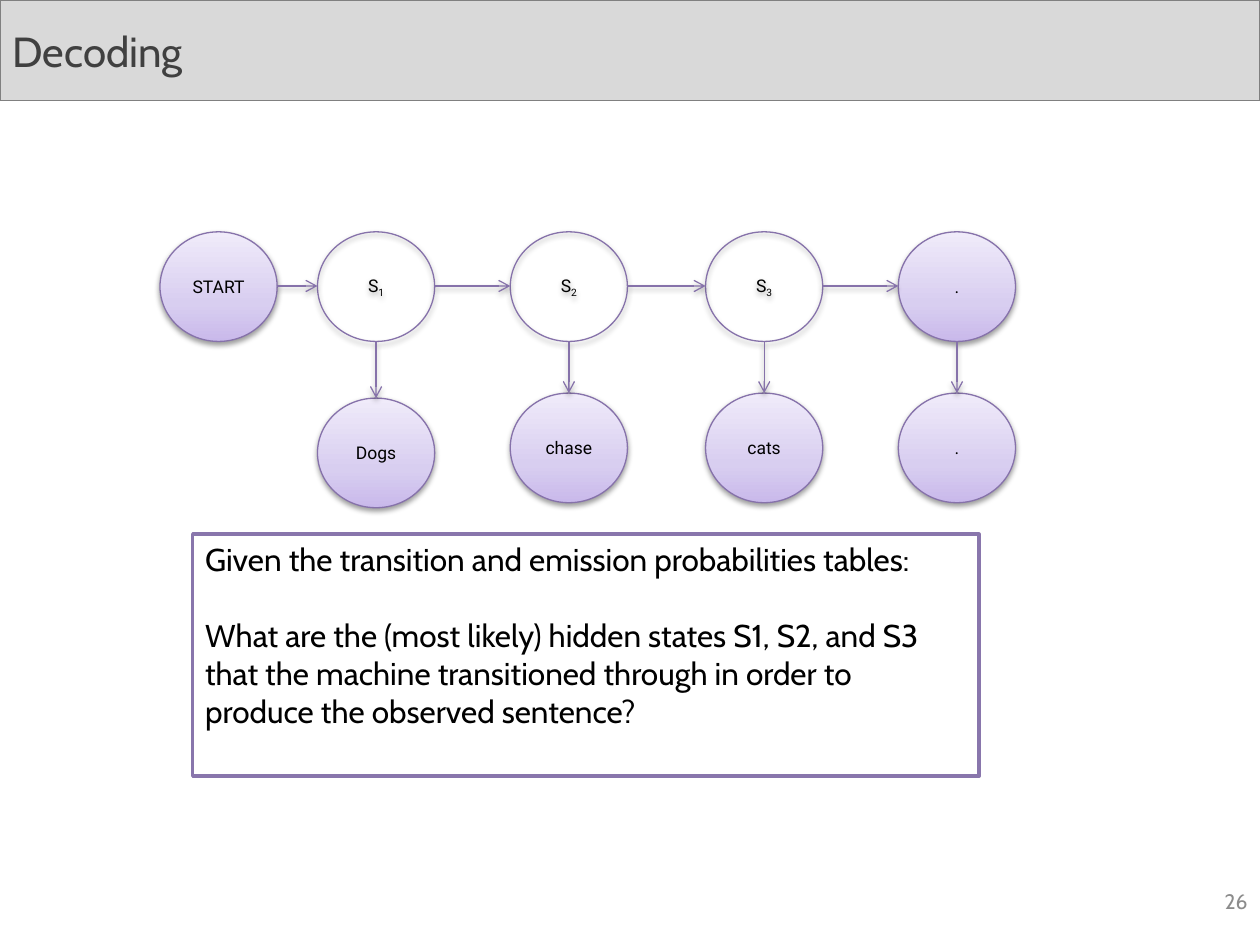
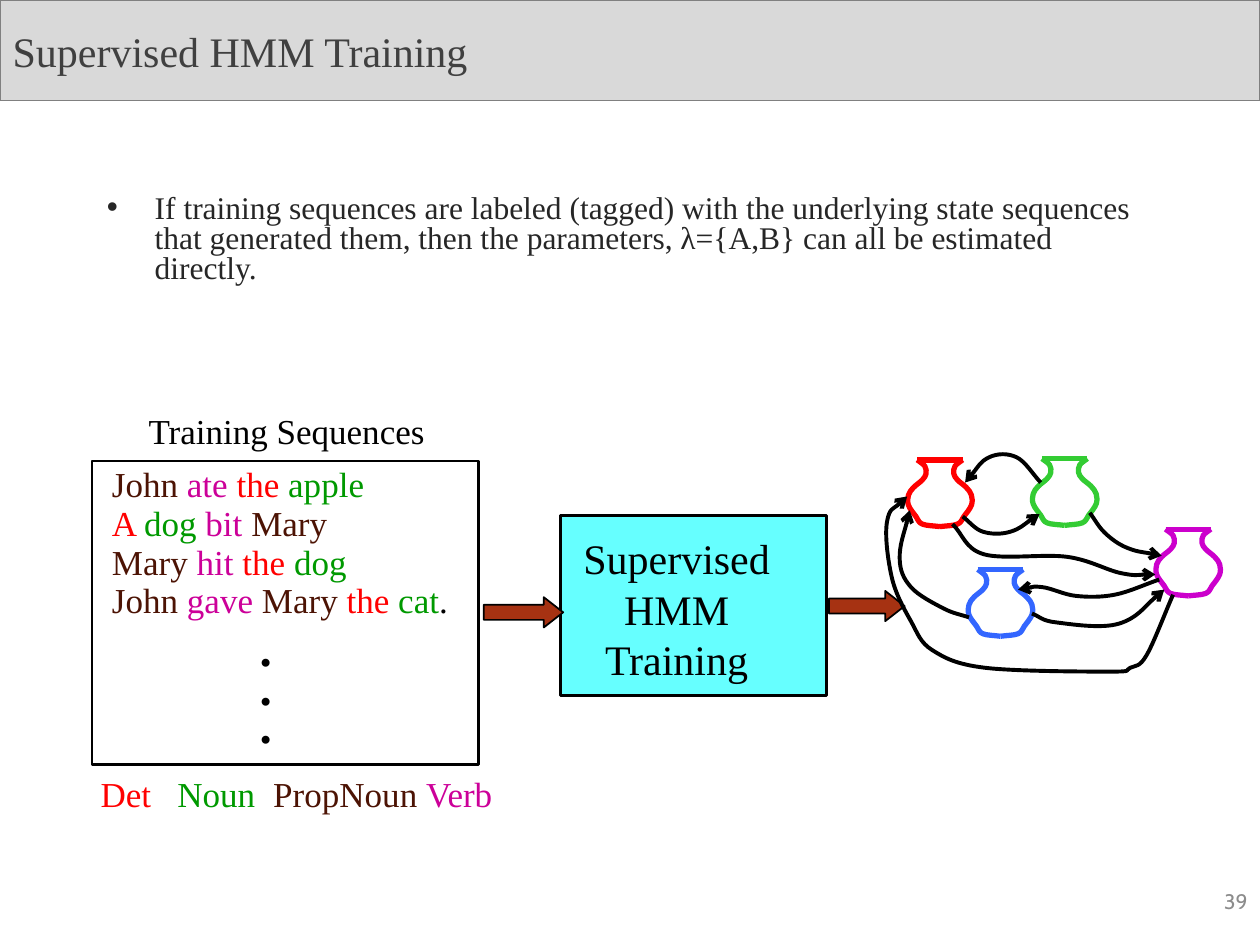
from dataclasses import dataclass

from lxml.etree import SubElement
from pptx import Presentation
from pptx.dml.color import RGBColor as RGB
from pptx.enum.shapes import MSO_CONNECTOR as LINK, MSO_SHAPE as SHAPE
from pptx.enum.text import MSO_ANCHOR as ANCHOR, MSO_AUTO_SIZE as SIZE, PP_ALIGN as ALIGN
from pptx.oxml import parse_xml
from pptx.oxml.ns import nsdecls, qn
from pptx.util import Inches, Pt


@dataclass(frozen=True)
class Theme:
    """Colours, fonts and type sizes of both slides."""
    band: str = "D9D9D9"
    edge: str = "808080"
    head: str = "404040"
    body: str = "262626"
    page: str = "8C8C8C"
    ink: str = "000000"
    white: str = "FFFFFF"
    node: str = "8672AA"
    frame: str = "8976AC"
    cyan: str = "66FFFF"
    rust: str = "A63212"
    sans: str = "Cabin"
    label: str = "Roboto"
    serif: str = "Times New Roman"
    tiny: int = 10
    small: int = 12
    text: int = 18
    large: int = 20
    title: int = 24
    dot: int = 28


T = Theme()
FADE = ((0, "C9B9EB"), (35, "D8CEF0"), (100, "F0EBFA"))
TAGS = {"D": "FF0000", "N": "009900", "P": "4C1304", "V": "CC0099", "X": T.ink}
NODE_W, NODE_H = 0.93, 0.87
STATES = ((1.27, "START"), (2.52, "1"), (4.05, "2"), (5.6, "3"), (7.13, "."))
WORDS = ((2.52, 3.16, "Dogs"), (4.05, 3.12, "chase"), (5.6, 3.12, "cats"), (7.13, 3.12, "."))
SAMPLES = ("P:John |V:ate |D:the |N:apple", "D:A |N:dog |V:bit |P:Mary",
           "P:Mary| :hit |D:the |N:dog".replace("| :", "|V: "),
           "P:John |V:gave |P:Mary |D:the |N:cat|X:.")
LEGEND = "D:Det\t|N:Noun\t|P:PropNoun |V:Verb"
JARS = ((7.94, 4.52, "3366FF"), (8.45, 3.64, "33CC33"),
        (7.46, 3.65, "FF0000"), (9.43, 4.2, "CC00CC"))
PROFILE = ((0.18, 0), (0.12, 0.05), (0.11, 0.11), (0.14, 0.16), (0.21, 0.22),
           (0.25, 0.28), (0.25, 0.36), (0.19, 0.45), (0.14, 0.51), (0, 0.53))
MOVES = (
    ((7.64, 4.1), (7.8, 4.22), (8.02, 4.22), (8.25, 4.08)),
    ((8.65, 4.07), (8.77, 4.23), (8.95, 4.35), (9.22, 4.41)),
    ((8.26, 3.83), (8.07, 3.63), (7.85, 3.63), (7.66, 3.83)),
    ((7.56, 4.16), (7.81, 4.4), (8.47, 4.42), (8.9, 4.55), (9.17, 4.56)),
    ((8.19, 4.87), (8.38, 4.94), (8.88, 4.95), (9.24, 4.68)),
    ((7.69, 4.9), (7.49, 4.83), (7.23, 4.66), (7.14, 4.43), (7.22, 4.05)),
    ((9.31, 4.72), (9.1, 5.2), (8.97, 5.3), (8.81, 5.33), (7.82, 5.3), (7.4, 5.16),
     (7.23, 4.93), (7.08, 4.59), (7.04, 4.14), (7.2, 3.94)),
    ((9.2, 4.6), (8.85, 4.72), (8.54, 4.73), (8.27, 4.66), (8.08, 4.68)),
)


def rgb(code):
    """Turn a hex code into a colour."""
    return RGB.from_string(code)


def paint(shape, fill, edge, width):
    """Set the fill, if any, and the outline."""
    if fill:
        shape.fill.solid()
        shape.fill.fore_color.rgb = rgb(fill)
    else:
        shape.fill.background()
    shape.line.color.rgb = rgb(edge)
    shape.line.width = Pt(width)


def shade(shape, soft=False):
    """Replace the theme's shadow by none or by a soft one."""
    props = shape._element.spPr
    for old in props.findall(qn("a:effectLst")):
        props.remove(old)
    glow = SubElement(props, qn("a:effectLst"))
    if soft:
        glow.append(parse_xml(
            f'<a:outerShdw {nsdecls("a")} blurRad="40000" dist="20000" dir="5400000" '
            'rotWithShape="0"><a:srgbClr val="000000"><a:alpha val="38000"/>'
            '</a:srgbClr></a:outerShdw>'))


def fade(shape):
    """Fill a shape with the lilac gradient."""
    shape.fill.gradient()
    stops = "".join(f'<a:gs pos="{pos * 1000}"><a:srgbClr val="{code}"/></a:gs>'
                    for pos, code in FADE)
    props = shape._element.spPr
    props.replace(props.find(qn("a:gradFill")), parse_xml(
        f'<a:gradFill {nsdecls("a")} rotWithShape="1"><a:gsLst>{stops}</a:gsLst>'
        '<a:lin ang="16200000" scaled="0"/></a:gradFill>'))


def point(shape):
    """Put an open arrowhead at the end of a line."""
    SubElement(shape.line._get_or_add_ln(), qn("a:tailEnd"), type="arrow")


def write(shape, paras, face, size, color=T.ink, align=ALIGN.LEFT, anchor=ANCHOR.TOP,
          wrap=True, lead=None, gap=0, bold=False):
    """Fill a shape with paragraphs, each a string or a list of coloured runs."""
    frame = shape.text_frame
    frame.word_wrap, frame.auto_size = wrap, SIZE.NONE
    frame.vertical_anchor = anchor
    for i, runs in enumerate(paras):
        para = frame.add_paragraph() if i else frame.paragraphs[0]
        para.alignment = align
        if lead:
            para.line_spacing = lead
        if i and gap:
            para.space_before = Pt(gap)
        font = para.font
        font.name, font.size, font.bold = face, Pt(size), bold
        if isinstance(runs, str):
            font.color.rgb = rgb(color)
            runs = [(runs, None)]
        for text, tint in runs:
            run = para.add_run()
            run.text = text
            if tint:
                run.font.color.rgb = rgb(tint)
    return frame


def tagged(line):
    """Split a tagged line into runs coloured by word class."""
    return [(part[2:], TAGS[part[0]]) for part in line.split("|")]


def note(slide, left, top, width, height, paras, *args, **opts):
    """Add a text box."""
    box = slide.shapes.add_textbox(*map(Inches, (left, top, width, height)))
    return write(box, paras, *args, **opts)


def block(slide, kind, left, top, width, height, fill, edge, line):
    """Add a flat preset shape."""
    shape = slide.shapes.add_shape(kind, *map(Inches, (left, top, width, height)))
    paint(shape, fill, edge, line)
    shade(shape)
    return shape


def link(slide, start, end, color, width):
    """Add a straight line."""
    line = slide.shapes.add_connector(LINK.STRAIGHT, *map(Inches, (*start, *end)))
    line.line.color.rgb = rgb(color)
    line.line.width = Pt(width)
    shade(line)
    return line


def arrow(slide, start, end):
    """Add a lilac arrow with a soft shadow."""
    line = link(slide, start, end, T.node, 0.75)
    point(line)
    shade(line, soft=True)


def bend(shape, knots):
    """Turn the straight segments of a freeform into smooth cubic ones."""
    def flip(near, far):
        return tuple(2 * a - b for a, b in zip(near, far))
    trace = next(shape._element.iter(qn("a:path")))
    for leg in trace.findall(qn("a:lnTo")):
        trace.remove(leg)
    spots = [(x - shape.left, y - shape.top) for x, y in knots]
    spots = [flip(spots[0], spots[1]), *spots, flip(spots[-1], spots[-2])]
    for a, b, c, d in zip(spots, spots[1:], spots[2:], spots[3:]):
        leg = SubElement(trace, qn("a:cubicBezTo"))
        out = [q + (r - p) / 6 for p, q, r in zip(a, b, c)]
        back = [q - (r - p) / 6 for p, q, r in zip(b, c, d)]
        for x, y in (out, back, c):
            SubElement(leg, qn("a:pt"), x=str(round(x)), y=str(round(y)))


def curve(slide, knots, color, width):
    """Draw a smooth open outline."""
    knots = [(Inches(x), Inches(y)) for x, y in knots]
    pen = slide.shapes.build_freeform(*knots[0])
    pen.add_line_segments(knots[1:], close=False)
    shape = pen.convert_to_shape()
    bend(shape, knots)
    paint(shape, None, color, width)
    shade(shape)
    return shape


def jar(slide, mid, top, color):
    """Draw a jar as two mirrored sides and a rim."""
    for side in (-1, 1):
        curve(slide, [(mid + side * x, top + y) for x, y in PROFILE], color, 3)
    rim = PROFILE[0][0]
    link(slide, (mid - rim, top), (mid + rim, top), color, 3)


def node(slide, left, top, text, hidden=False):
    """Draw a state or word circle; hidden states get a subscript."""
    oval = block(slide, SHAPE.OVAL, left, top, NODE_W, NODE_H, None, T.node, 0.75)
    if not hidden:
        fade(oval)
    shade(oval, soft=True)
    runs = [("S", T.ink), (text, T.ink)] if hidden else text
    frame = write(oval, [runs], T.label, T.tiny, align=ALIGN.CENTER, anchor=ANCHOR.MIDDLE)
    frame.margin_left = frame.margin_right = 0
    if hidden:
        frame.paragraphs[0].runs[1].font._element.set("baseline", "-25000")


def page(deck, title, face, number):
    """Add a slide with its title band and page number."""
    slide = deck.slides.add_slide(deck.slide_layouts[5])
    band = slide.shapes.title
    band.left, band.top, band.width, band.height = map(Inches, (0, 0, 10, 0.8))
    paint(band, T.band, T.edge, 0.75)
    write(band, [title], face, T.title, T.head, anchor=ANCHOR.MIDDLE)
    note(slide, 7.67, 6.95, 2.33, 0.4, [number], T.sans, T.small, T.page,
         align=ALIGN.RIGHT, anchor=ANCHOR.MIDDLE)
    return slide


def decode(deck):
    """Build the slide on decoding."""
    slide = page(deck, "Decoding", T.sans, "26")
    top = 1.84
    for left, text in STATES:
        node(slide, left, top, text, hidden=text.isdigit())
    for left, low, text in WORDS:
        node(slide, left, low, text)
        mid = left + NODE_W / 2
        arrow(slide, (mid, top + NODE_H), (mid, low))
    for (left, _), (right, _) in zip(STATES, STATES[1:]):
        arrow(slide, (left + NODE_W, 2.27), (right, 2.27))
    box = block(slide, SHAPE.RECTANGLE, 1.53, 4.24, 6.24, 1.92, T.white, T.frame, 2)
    write(box, ["Given the transition and emission probabilities tables:",
                "What are the (most likely) hidden states S1, S2, and S3 that the machine "
                "transitioned through in order to produce the observed sentence?"],
          T.sans, T.text, gap=21.8)


def bullet(slide, text):
    """Add the bulleted statement."""
    box = block(slide, SHAPE.RECTANGLE, 0.75, 1.5, 8.5, 2.01, None, T.white, 0.75)
    props = box.text_frame.paragraphs[0]._p.get_or_add_pPr()
    props.set("marL", str(Inches(0.38)))
    props.set("indent", str(-Inches(0.38)))
    SubElement(props, qn("a:buFont"), typeface="Arial")
    SubElement(props, qn("a:buChar"), char="•")
    write(box, [text], T.serif, T.text, T.body, lead=0.8)


def legend(slide):
    """Add the key to the word classes."""
    frame = note(slide, 0.7, 6.08, 3.4, 0.43, [], T.serif, T.large)
    props = frame.paragraphs[0]._p.get_or_add_pPr()
    tabs = SubElement(props, qn("a:tabLst"))
    for stop in (0.61, 1.37):
        SubElement(tabs, qn("a:tab"), pos=str(Inches(stop)), algn="l")
    write(slide.shapes[-1], [tagged(LEGEND)], T.serif, T.large)


def train(deck):
    """Build the slide on supervised training."""
    slide = page(deck, "Supervised HMM Training", T.serif, "39")
    bullet(slide, "If training sequences are labeled (tagged) with the underlying state "
                  "sequences that generated them, then the parameters, λ={A,B} can all be "
                  "estimated directly.")
    block(slide, SHAPE.RECTANGLE, 4.45, 4.09, 2.11, 1.43, T.cyan, T.ink, 1.5)
    note(slide, 4.53, 4.18, 1.68, 1.3, ["Supervised", "HMM", "Training"], T.serif, T.title,
         align=ALIGN.CENTER, wrap=False)
    for left, top, width in ((3.84, 4.74, 0.63), (6.58, 4.69, 0.6)):
        flow = block(slide, SHAPE.RIGHT_ARROW, left, top, width, 0.24, T.rust, T.ink, 1)
        flow.adjustments[1] = 0.64
    for spot in JARS:
        jar(slide, *spot)
    for knots in MOVES:
        point(curve(slide, knots, T.ink, 2.25))
    note(slide, 0.79, 3.77, 3.05, 2.77, [tagged(line) for line in SAMPLES], T.serif, T.large,
         lead=0.5, gap=10)
    note(slide, 1.96, 5, 0.3, 1.01, ["."] * 3, T.serif, T.dot, align=ALIGN.CENTER,
         wrap=False, lead=0.65, bold=True)
    block(slide, SHAPE.RECTANGLE, 0.73, 3.66, 3.07, 2.41, None, T.ink, 1.5)
    note(slide, 1.08, 3.2, 2.39, 0.43, ["Training Sequences"], T.serif, T.large,
         align=ALIGN.CENTER, wrap=False)
    legend(slide)


def main():
    """Build and save the deck."""
    deck = Presentation()
    deck.slide_width, deck.slide_height = Inches(10), Inches(7.5)
    decode(deck)
    train(deck)
    deck.save("out.pptx")


if __name__ == "__main__":
    main()
